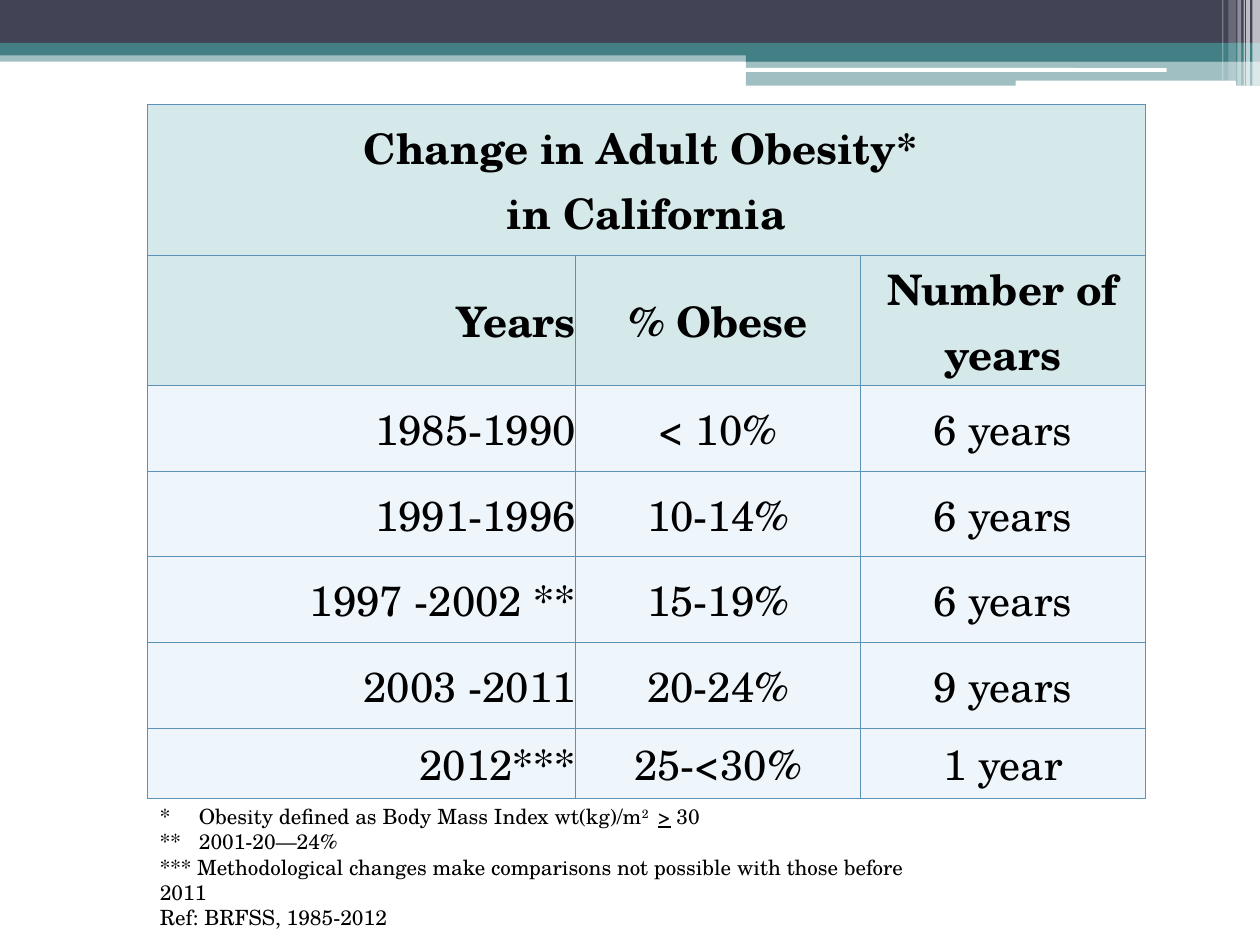
from collections import namedtuple

from lxml import etree
from pptx import Presentation
from pptx import util as u
from pptx.dml.color import RGBColor
from pptx.enum import shapes, text
from pptx.oxml import ns

Box = namedtuple("Box", "left top width height")
COLUMNS, ROWS = 1000, 750
SLIDE_WIDTH, SLIDE_HEIGHT = u.Inches(10), u.Inches(7.5)
FONT = "TeX Gyre Schola"
NAVY, TEAL, WHITE, BLACK = "424456", "438086", "FFFFFF", "000000"
HEADER_FILL, BODY_FILL, RULE = "D6E9EA", "EEF5FB", "5C92B5"


def across(columns):
    """Turn grid columns into a length."""
    return int(SLIDE_WIDTH * columns / COLUMNS)


def down(rows):
    """Turn grid rows into a length."""
    return int(SLIDE_HEIGHT * rows / ROWS)


def place(box):
    """Turn a grid box into slide lengths."""
    return across(box.left), down(box.top), across(box.width), down(box.height)


def paint(fill, color, opacity=100):
    """Fill solidly, with an opacity in percent."""
    fill.solid()
    fill.fore_color.rgb = RGBColor.from_string(color)
    if opacity < 100:
        srgb = fill._xPr.find(".//" + ns.qn("a:srgbClr"))
        etree.SubElement(srgb, ns.qn("a:alpha"), val=str(opacity * 1000))


def style(paragraph, size, bold=False):
    """Set the font of a whole paragraph."""
    font = paragraph.font
    font.name, font.size, font.bold = FONT, u.Pt(size), bold
    font.color.rgb = RGBColor.from_string(BLACK)


def add_strip(slide, box, color, opacity=100, rounded=False):
    """Add one unlined strip of the banner."""
    kind = shapes.MSO_SHAPE.ROUNDED_RECTANGLE if rounded else shapes.MSO_SHAPE.RECTANGLE
    strip = slide.shapes.add_shape(kind, *place(box))
    strip.shadow.inherit = False
    strip.line.fill.background()
    paint(strip.fill, color, opacity)


def add_banner(slide, box):
    """Draw the bands, white rules and right-hand bars across the top."""
    step = 592
    bands = [
        (0, 40, box.width, 9, TEAL, 50),
        (0, 0, box.width, 34, NAVY, 100),
        (0, 34, box.width, 10, TEAL, 100),
        (step, 39, box.width - step, 10, TEAL, 100),
        (step, 48, box.width - step, 20, TEAL, 50),
    ]
    for left, top, width, height, color, opacity in bands:
        add_strip(slide, Box(box.left + left, box.top + top, width, height), color, opacity)
    for left, top, width, height in [(591, 54, 335, 3), (806, 64, 175, 5)]:
        add_strip(slide, Box(box.left + left, box.top + top, width, height), WHITE, rounded=True)
    bars = [
        (994, 6, 68, 65), (989, 3, 68, 65), (987, 1, 68, 60),
        (982, 3, 68, 40), (975, 6, 64, 20), (970, 1, 64, 30),
    ]
    for left, width, height, opacity in bars:
        add_strip(slide, Box(box.left + left, box.top, width, height), WHITE, opacity)


def add_borders(cell):
    """Rule all four sides of a cell."""
    properties = cell._tc.get_or_add_tcPr()
    for index, side in enumerate(("a:lnL", "a:lnR", "a:lnT", "a:lnB")):
        line = etree.Element(ns.qn(side), w=str(u.Pt(0.75)))
        solid = etree.SubElement(line, ns.qn("a:solidFill"))
        etree.SubElement(solid, ns.qn("a:srgbClr"), val=RULE)
        properties.insert(index, line)


def fill_cell(cell, wording, align, header):
    """Write and style one table cell."""
    cell.margin_left = cell.margin_right = cell.margin_top = cell.margin_bottom = 0
    cell.vertical_anchor = text.MSO_ANCHOR.MIDDLE
    paint(cell.fill, HEADER_FILL if header else BODY_FILL)
    add_borders(cell)
    cell.text_frame.text = wording
    for paragraph in cell.text_frame.paragraphs:
        paragraph.alignment = align
        style(paragraph, 24, header)


def add_obesity_table(slide, box):
    """Build the table of obesity by period."""
    entries = [
        ("Change in Adult Obesity* \nin California", "", ""),
        ("Years", "% Obese", "Number of years"),
        ("1985-1990", "< 10%", "6 years"),
        ("1991-1996", "10-14%", "6 years"),
        ("1997 -2002 **", "15-19%", "6 years"),
        ("2003 -2011", "20-24%", "9 years"),
        ("2012***", "25-<30%", "1 year"),
    ]
    row_heights = [120, 103] + [68] * 4 + [56]
    years_width = 340
    value_width = (box.width - years_width) / 2
    table = slide.shapes.add_table(len(entries), 3, *place(box)).table
    for column, width in zip(table.columns, (years_width, value_width, value_width)):
        column.width = across(width)
    table.cell(0, 0).merge(table.cell(0, 2))
    for r, (row, height) in enumerate(zip(entries, row_heights)):
        table.rows[r].height = down(height)
        for c, wording in enumerate(row):
            right = c == 0 and r > 0
            align = text.PP_ALIGN.RIGHT if right else text.PP_ALIGN.CENTER
            fill_cell(table.cell(r, c), wording, align, header=r < 2)


def add_footnotes(slide, box):
    """Write the notes and the reference under the table."""
    notes = [
        ["*\tObesity defined as Body Mass Index wt(kg)/m", "2 ", " ", ">", " 30"],
        ["**\t2001-20—24%"],
        ["*** Methodological changes make comparisons not possible with those before 2011"],
        ["Ref: BRFSS, 1985-2012"],
    ]
    frame = slide.shapes.add_textbox(*place(box)).text_frame
    frame.word_wrap = True
    for index, pieces in enumerate(notes):
        paragraph = frame.add_paragraph() if index else frame.paragraphs[0]
        if "\t" in pieces[0]:
            stops = etree.SubElement(paragraph._p.get_or_add_pPr(), ns.qn("a:tabLst"))
            etree.SubElement(stops, ns.qn("a:tab"), pos=str(across(31)), algn="l")
        style(paragraph, 12)
        for piece in pieces:
            run = paragraph.add_run()
            run.text = piece
            if piece == "2 ":
                run._r.get_or_add_rPr().set("baseline", "30000")
            elif piece == ">":
                run.font.underline = True


def main():
    """Build and save the slide."""
    deck = Presentation()
    deck.slide_width, deck.slide_height = SLIDE_WIDTH, SLIDE_HEIGHT
    slide = deck.slides.add_slide(deck.slide_layouts[6])
    add_banner(slide, Box(0, 0, COLUMNS, 68))
    add_obesity_table(slide, Box(117, 83, 792, 551))
    add_footnotes(slide, Box(117, 633, 642, 111))
    deck.save("out.pptx")


if __name__ == "__main__":
    main()
